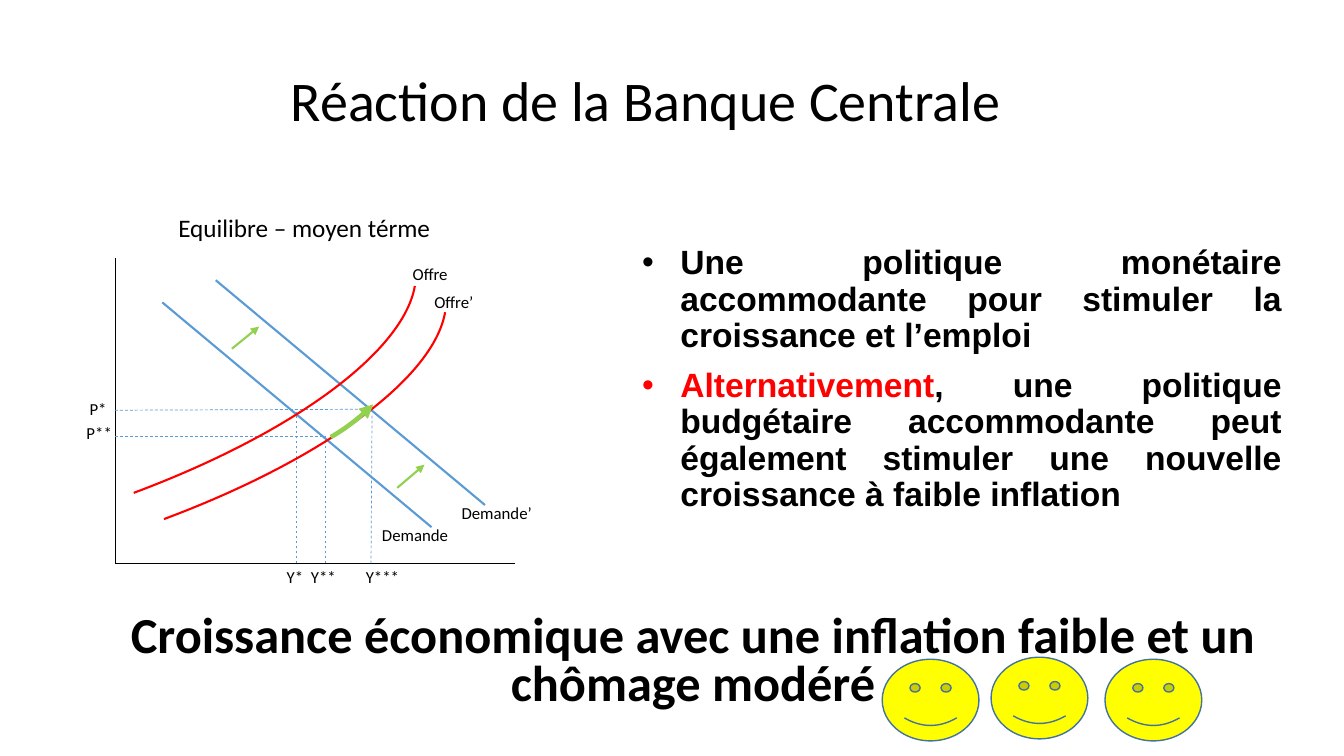
"""Build the slide on the central bank's reaction, with its supply and demand diagram."""
from dataclasses import dataclass

from lxml import etree
from pptx import Presentation
from pptx.dml.color import RGBColor
from pptx.enum.dml import MSO_LINE
from pptx.enum.shapes import MSO_CONNECTOR, MSO_SHAPE
from pptx.enum.text import MSO_ANCHOR, MSO_AUTO_SIZE, PP_ALIGN
from pptx.oxml.ns import qn
from pptx.util import Emu, Inches, Pt

SLIDE_W, SLIDE_H = Inches(13.33), Inches(7.5)
COL, ROW = SLIDE_W / 133.3, SLIDE_H / 75

BLACK = RGBColor(0x00, 0x00, 0x00)
RED = RGBColor(0xFF, 0x00, 0x00)
BLUE = RGBColor(0x5B, 0x9B, 0xD5)
GREEN = RGBColor(0x92, 0xD0, 0x50)
YELLOW = RGBColor(0xFF, 0xFF, 0x00)
OUTLINE = RGBColor(0x43, 0x73, 0x9E)

STRAIGHT = MSO_CONNECTOR.STRAIGHT
ARC, SMILEY = MSO_SHAPE.ARC, MSO_SHAPE.SMILEY_FACE
DASH = MSO_LINE.DASH
LEFT, CENTER, JUSTIFY = PP_ALIGN.LEFT, PP_ALIGN.CENTER, PP_ALIGN.JUSTIFY
TOP, BOTTOM = MSO_ANCHOR.TOP, MSO_ANCHOR.BOTTOM
GROW, FIXED = MSO_AUTO_SIZE.SHAPE_TO_FIT_TEXT, MSO_AUTO_SIZE.NONE


@dataclass(frozen=True)
class Box:
    """Place and size in grid columns and rows."""
    x: float
    y: float
    w: float
    h: float

    def emu(self) -> tuple:
        """Return left, top, width and height as lengths."""
        return (Emu(round(self.x * COL)), Emu(round(self.y * ROW)),
                Emu(round(self.w * COL)), Emu(round(self.h * ROW)))


@dataclass(frozen=True)
class Line:
    """Straight line between two grid points."""
    x1: float
    y1: float
    x2: float
    y2: float
    color: RGBColor = BLUE
    weight: float = 0.5
    dashed: bool = False
    arrow: bool = False


@dataclass(frozen=True)
class Arc:
    """Rotated arc with its start and end adjustments."""
    box: Box
    rotation: float
    start: float
    end: float
    color: RGBColor = RED
    weight: float = 1.5
    arrow: bool = False


@dataclass(frozen=True)
class Label:
    """Short text of the diagram."""
    text: str
    x: float
    y: float
    w: float = 13.4
    h: float = 3
    size: float = 12


AXIS_X, AXIS_Y = 11.4, 55.9
LINES = [
    Line(AXIS_X, 25.6, AXIS_X, AXIS_Y, BLACK),
    Line(51.1, AXIS_Y, AXIS_X, AXIS_Y, BLACK),
    Line(16.1, 30, 42.8, 52.3, weight=1.5),
    Line(21.4, 27.8, 48.1, 50.1, weight=1.5),
    Line(AXIS_X, 40.7, 36.8, 40.6, dashed=True),
    Line(AXIS_X, 43.3, 32.3, 43.3, dashed=True),
    Line(29.4, AXIS_Y, 29.4, 40.9, dashed=True),
    Line(32.3, AXIS_Y, 32.3, 43.3, dashed=True),
    Line(36.8, AXIS_Y, 36.9, 41, dashed=True),
    Line(39.4, 48.4, 42.1, 46.1, GREEN, 1.5, arrow=True),
    Line(23, 34.6, 25.7, 32.4, GREEN, 1.5, arrow=True),
]
ARCS = [
    Arc(Box(-15, -5.2, 30.1, 85.2), 74.2, 164.05, 196.09),
    Arc(Box(-12, -2.6, 30.1, 85.2), 74.2, 164.05, 196.09),
    Arc(Box(23.2, 32.8, 20, 9.2), 137.8, 154.65, 189.57, GREEN, 3.25, True),
]
LABELS = [
    Label("Equilibre – moyen térme", 16.7, 20.55, 31.3, 4, 18),
    Label("Offre", 39.95, 25.7),
    Label("Offre’", 42.1, 28.5),
    Label("Demande", 36.9, 51.55),
    Label("Demande’", 44.8, 49.4),
    Label("P*", 7.9, 39.1, 6.6),
    Label("P**", 7.6, 41.45, 6.6),
    Label("Y*", 27.45, 55.7, 6.6),
    Label("Y**", 29.85, 55.7, 6.6),
    Label("Y***", 35.3, 55.7, 6.6),
]
SMILEYS = [Box(x, y, 9.6, 8.1) for x, y in ((87.5, 65.4), (98.3, 65.2), (109.6, 65.4))]
POLICIES = [
    [("Une politique monétaire accommodante pour stimuler la croissance et l’emploi", BLACK)],
    [("Alternativement", RED),
     (", une politique budgétaire accommodante peut également stimuler une nouvelle "
      "croissance à faible inflation", BLACK)],
]


def write(p, text: str, *, size: float, font: str = "Calibri", color: RGBColor = BLACK,
          bold: bool = False, align=LEFT, spacing: float = 1.0, before: float = 0) -> None:
    """Add a formatted run to a paragraph."""
    p.alignment, p.line_spacing, p.space_before = align, spacing, Pt(before)
    r = p.add_run()
    r.text = text
    r.font.name, r.font.size, r.font.bold = font, Pt(size), bold
    r.font.color.rgb = color


def frame(sp, anchor=TOP, fit=FIXED):
    """Prepare the text frame of a shape and return it."""
    tf = sp.text_frame
    tf.word_wrap, tf.vertical_anchor, tf.auto_size = True, anchor, fit
    return tf


def add_bullet(p, indent: int) -> None:
    """Give a paragraph a hanging round bullet."""
    props = p._p.get_or_add_pPr()
    props.set("marL", str(indent))
    props.set("indent", str(-indent))
    etree.SubElement(props, qn("a:buFont")).set("typeface", "Arial")
    etree.SubElement(props, qn("a:buChar")).set("char", "•")


def style_line(line, color: RGBColor, weight: float, arrow_end: str = "") -> None:
    """Set colour and width of a line, and a triangle at the named end."""
    line.color.rgb, line.width = color, Pt(weight)
    if arrow_end:
        etree.SubElement(line._get_or_add_ln(), qn(arrow_end)).set("type", "triangle")


def add_line(slide, item: Line) -> None:
    """Draw a straight line."""
    x1, y1, x2, y2 = Box(item.x1, item.y1, item.x2, item.y2).emu()
    sp = slide.shapes.add_connector(STRAIGHT, x1, y1, x2, y2)
    if item.dashed:
        sp.line.dash_style = DASH
    style_line(sp.line, item.color, item.weight, "a:tailEnd" if item.arrow else "")
    etree.SubElement(sp._element.spPr, qn("a:effectLst"))


def add_arc(slide, item: Arc) -> None:
    """Draw a rotated arc."""
    sp = slide.shapes.add_shape(ARC, *item.box.emu())
    sp.shadow.inherit = False
    sp.rotation = item.rotation
    sp.adjustments[0], sp.adjustments[1] = item.start, item.end
    sp.fill.background()
    style_line(sp.line, item.color, item.weight, "a:headEnd" if item.arrow else "")


def add_smiley(slide, box: Box) -> None:
    """Draw a yellow smiling face."""
    sp = slide.shapes.add_shape(SMILEY, *box.emu())
    sp.shadow.inherit = False
    sp.fill.solid()
    sp.fill.fore_color.rgb = YELLOW
    style_line(sp.line, OUTLINE, 1)


def add_label(slide, item: Label) -> None:
    """Add a diagram label."""
    sp = slide.shapes.add_textbox(*Box(item.x, item.y, item.w, item.h).emu())
    write(frame(sp, fit=GROW).paragraphs[0], item.text, size=item.size)


def add_policies(slide) -> None:
    """Add the bulleted policy options."""
    tf = frame(slide.shapes.add_textbox(*Box(62.7, 23.9, 65.4, 37.6).emu()))
    for i, runs in enumerate(POLICIES):
        p = tf.add_paragraph() if i else tf.paragraphs[0]
        for text, color in runs:
            write(p, text, size=24, font="Arial", color=color, bold=True,
                  align=JUSTIFY, spacing=0.9, before=10)
        add_bullet(p, Inches(0.38))


def main() -> None:
    """Build and save the slide."""
    prs = Presentation()
    prs.slide_width, prs.slide_height = SLIDE_W, SLIDE_H
    slide = prs.slides.add_slide(prs.slide_layouts[5])
    title = slide.shapes.title
    title.left, title.top, title.width, title.height = Box(4.7, 2.5, 118.7, 11.3).emu()
    write(frame(title, BOTTOM).paragraphs[0], "Réaction de la Banque Centrale",
          size=40, align=CENTER, spacing=0.9)
    for draw, items in ((add_line, LINES), (add_arc, ARCS), (add_label, LABELS)):
        for item in items:
            draw(slide, item)
    add_policies(slide)
    sp = slide.shapes.add_textbox(*Box(9.4, 59.8, 118.7, 11.3).emu())
    write(frame(sp, BOTTOM).paragraphs[0],
          "Croissance économique avec une inflation faible et un chômage modéré",
          size=36, bold=True, align=CENTER, spacing=0.8)
    for box in SMILEYS:
        add_smiley(slide, box)
    prs.save("out.pptx")


if __name__ == "__main__":
    main()
